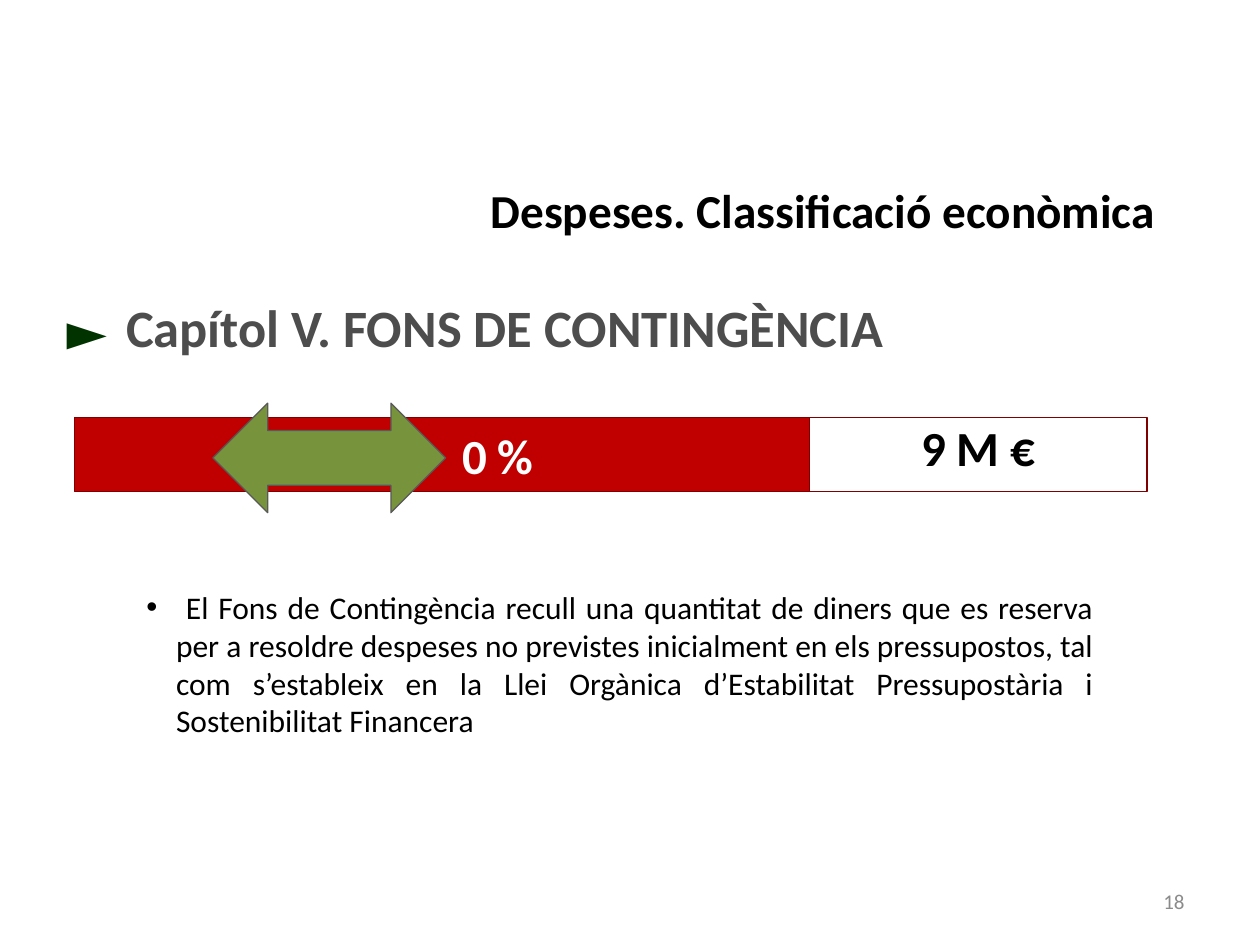
from pptx import Presentation
from pptx.dml.color import RGBColor
from pptx.enum.shapes import MSO_SHAPE
from pptx.enum.text import MSO_ANCHOR, PP_ALIGN
from pptx.util import Pt
from lxml import etree

COLORS = {
    "black": "000000", "white": "FFFFFF", "heading": "4D4D4D",
    "marker": "003300", "red": "C00000", "bar_line": "800000",
    "green": "77933C", "arrow_line": "595959", "page": "8B8B8B",
}
A = "http://schemas.openxmlformats.org/drawingml/2006/main"

prs = Presentation()
prs.slide_width, prs.slide_height = Pt(720), Pt(540)
slide = prs.slides.add_slide(prs.slide_layouts[6])


def color(name):
    return RGBColor.from_string(COLORS[name])


def write(shape, text, size, ink, bold=True, align=PP_ALIGN.LEFT,
          anchor=MSO_ANCHOR.TOP, left_inset=7.2, spacing=None, hanging=None):
    """Fill a shape with one paragraph; hanging is the bullet indent in points."""
    frame = shape.text_frame
    frame.word_wrap = True
    frame.vertical_anchor = anchor
    frame.margin_left = Pt(left_inset)
    paragraph = frame.paragraphs[0]
    paragraph.alignment = align
    if spacing:
        paragraph.line_spacing = spacing
    if hanging:
        properties = paragraph._p.get_or_add_pPr()
        properties.set("marL", str(Pt(hanging)))
        properties.set("indent", str(-Pt(hanging)))
        etree.SubElement(properties, f"{{{A}}}buFont", typeface="Arial")
        etree.SubElement(properties, f"{{{A}}}buChar", char="•")
    run = paragraph.add_run()
    run.text = text
    run.font.name = "Calibri"
    run.font.size = Pt(size)
    run.font.bold = bold
    run.font.color.rgb = color(ink)


# Headings, explanation and page number
explanation = (
    " El Fons de Contingència recull una quantitat de diners que es reserva per a "
    "resoldre despeses no previstes inicialment en els pressupostos, tal com "
    "s’estableix en la Llei Orgànica d’Estabilitat Pressupostària i "
    "Sostenibilitat Financera"
)
texts = [
    ((247, 100, 420, 40), "Despeses. Classificació econòmica",
     dict(size=27, ink="black", align=PP_ALIGN.RIGHT)),
    ((65, 165, 550, 43), "Capítol V. FONS DE CONTINGÈNCIA",
     dict(size=30, ink="heading")),
    ((31, 166.5, 40, 43), "►", dict(size=30, ink="marker")),
    ((76.5, 332.5, 555.5, 94), explanation,
     dict(size=18, ink="black", bold=False, align=PP_ALIGN.JUSTIFY, hanging=17)),
    ((516, 500.5, 168, 29), "18",
     dict(size=12, ink="page", bold=False, align=PP_ALIGN.RIGHT,
          anchor=MSO_ANCHOR.MIDDLE)),
]
for box, text, style in texts:
    write(slide.shapes.add_textbox(*map(Pt, box)), text, **style)

# Budget bar: share on the left, amount on the right, arrow over the share
bar_left, bar_top, bar_height = 42.5, 238.5, 42.5
share_width, amount_width = 420, 193
shapes = [
    (MSO_SHAPE.RECTANGLE, (bar_left, bar_top, share_width, bar_height),
     "red", "bar_line", "0 %", dict(ink="white", left_inset=71)),
    (MSO_SHAPE.RECTANGLE, (bar_left + share_width, bar_top, amount_width, bar_height),
     None, "bar_line", "9 M €", dict(ink="black", spacing=0.7)),
    (MSO_SHAPE.LEFT_RIGHT_ARROW, (121.7, 230.4, 133, 62.6),
     "green", "arrow_line", None, {}),
]
for kind, box, fill, line, text, style in shapes:
    shape = slide.shapes.add_shape(kind, *map(Pt, box))
    shape.shadow.inherit = False
    if fill:
        shape.fill.solid()
        shape.fill.fore_color.rgb = color(fill)
    else:
        shape.fill.background()
    shape.line.color.rgb = color(line)
    shape.line.width = Pt(0.75)
    if text:
        write(shape, text, size=28, align=PP_ALIGN.CENTER,
              anchor=MSO_ANCHOR.MIDDLE, **style)

prs.save("out.pptx")
